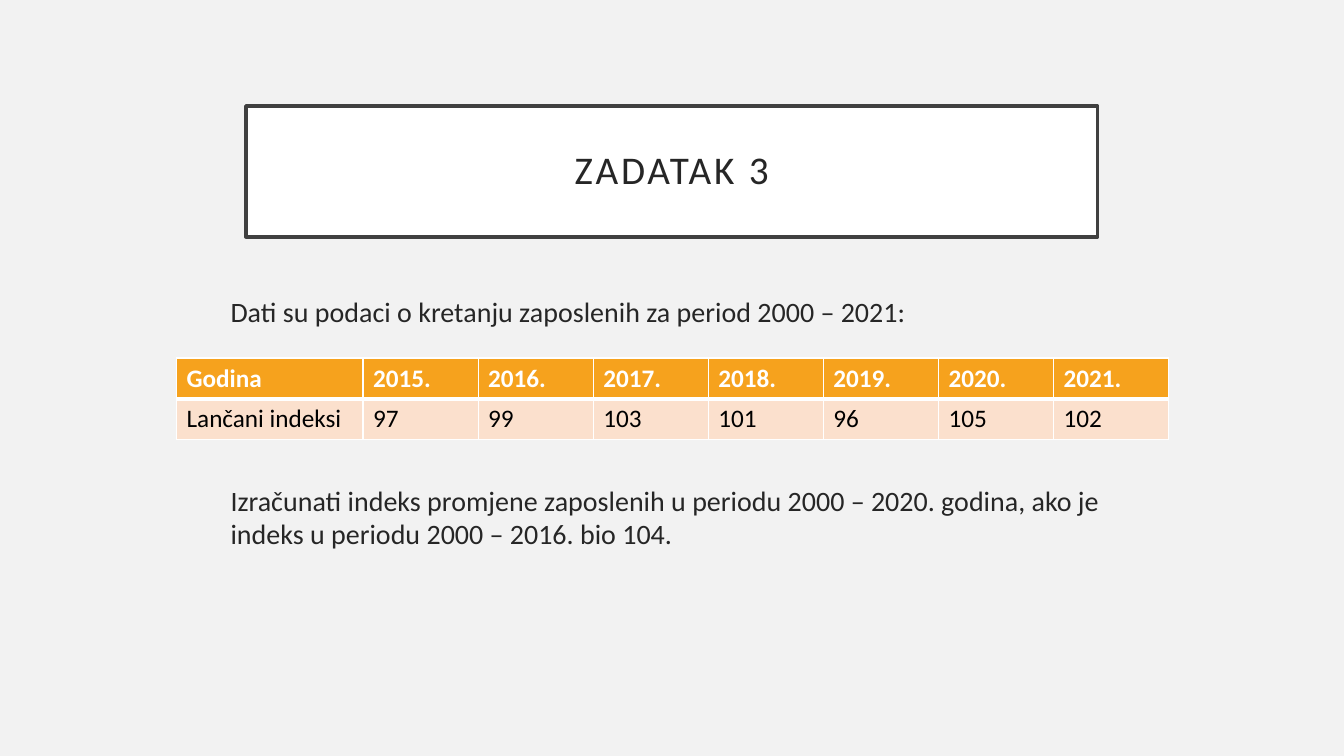
import pptx
import pptx.util
import pptx.dml.color
import pptx.enum.shapes
import pptx.enum.text
import pptx.oxml
import pptx.oxml.ns

Cm, Pt = pptx.util.Cm, pptx.util.Pt
RGBColor = pptx.dml.color.RGBColor
Align, Anchor = pptx.enum.text.PP_ALIGN, pptx.enum.text.MSO_ANCHOR

# Content
TITLE = "ZADATAK 3"
# (text, space before in points)
BODY = [
    ("Dati su podaci o kretanju zaposlenih za period 2000 – 2021:", 0),
    ("Izračunati indeks promjene zaposlenih u periodu 2000 – 2020. godina, "
     "ako je indeks u periodu 2000 – 2016. bio 104.", 111),
]
INDICES = {"2015.": 97, "2016.": 99, "2017.": 103, "2018.": 101,
           "2019.": 96, "2020.": 105, "2021.": 102}
ROWS = [["Godina", *INDICES], ["Lančani indeksi", *INDICES.values()]]

# Style
FONT = "Calibri"
WHITE = RGBColor(0xFF, 0xFF, 0xFF)
BLACK = RGBColor(0, 0, 0)
BACKGROUND = RGBColor(0xF2, 0xF2, 0xF2)
FRAME = RGBColor(0x40, 0x40, 0x40)
INK = RGBColor(0x26, 0x26, 0x26)
ORANGE = RGBColor(0xF6, 0xA2, 0x1D)
PEACH = RGBColor(0xFB, 0xE0, 0xCD)
ROW_STYLES = [(ORANGE, WHITE, True), (PEACH, BLACK, False)]
LABEL_W, YEAR_W, ROW_H = 4.7, 2.9, 1.03


def set_font(p, size, color, bold=False):
    p.font.name, p.font.size, p.font.bold = FONT, Pt(size), bold
    p.font.color.rgb = color


def set_borders(cell, widths):
    tcPr = cell._tc.get_or_add_tcPr()
    for i, (side, width) in enumerate(widths.items()):
        tcPr.insert(i, pptx.oxml.parse_xml(
            f'<a:ln{side} {pptx.oxml.ns.nsdecls("a")} w="{Pt(width)}"><a:solidFill>'
            f'<a:srgbClr val="{WHITE}"/></a:solidFill></a:ln{side}>'))


prs = pptx.Presentation()
prs.slide_width, prs.slide_height = Cm(33.87), Cm(19.05)
s = prs.slides.add_slide(prs.slide_layouts[6])
s.background.fill.solid()
s.background.fill.fore_color.rgb = BACKGROUND

# Title frame
sp = s.shapes.add_shape(pptx.enum.shapes.MSO_SHAPE.RECTANGLE,
                        Cm(6.2), Cm(2.67), Cm(21.46), Cm(3.3))
sp.shadow.inherit = False
sp.fill.solid()
sp.fill.fore_color.rgb = WHITE
sp.line.color.rgb = FRAME
sp.line.width = Pt(2.5)
tf = sp.text_frame
tf.word_wrap = True
tf.vertical_anchor = Anchor.MIDDLE
tf.margin_left = tf.margin_right = tf.margin_top = tf.margin_bottom = Cm(0.5)
p = tf.paragraphs[0]
p.alignment, p.line_spacing = Align.CENTER, 0.9
r = p.add_run()
r.text = TITLE
set_font(p, 28, INK)
r._r.get_or_add_rPr().set("spc", "200")

# Task text, above and below the table
tf = s.shapes.add_textbox(Cm(5.56), Cm(7.29), Cm(22.73), Cm(8.74)).text_frame
tf.word_wrap = True
for i, (text, before) in enumerate(BODY):
    p = tf.add_paragraph() if i else tf.paragraphs[0]
    p.text = text
    p.space_before = Pt(before)
    set_font(p, 20, INK)

# Table of chain indices
table = s.shapes.add_table(
    len(ROWS), len(ROWS[0]), Cm(4.45), Cm(9.02),
    Cm(LABEL_W + YEAR_W * len(INDICES)), Cm(ROW_H * len(ROWS))).table
for i, col in enumerate(table.columns):
    col.width = Cm(YEAR_W if i else LABEL_W)
for i, (row, (fill, color, bold)) in enumerate(zip(ROWS, ROW_STYLES)):
    table.rows[i].height = Cm(ROW_H)
    for j, value in enumerate(row):
        cell = table.cell(i, j)
        cell.text = str(value)
        set_font(cell.text_frame.paragraphs[0], 18, color, bold)
        cell.fill.solid()
        cell.fill.fore_color.rgb = fill
        set_borders(cell, {"L": 1, "R": 1, "T": 1 if i == 0 else 3,
                           "B": 3 if i == 0 else 1})

prs.save("out.pptx")
